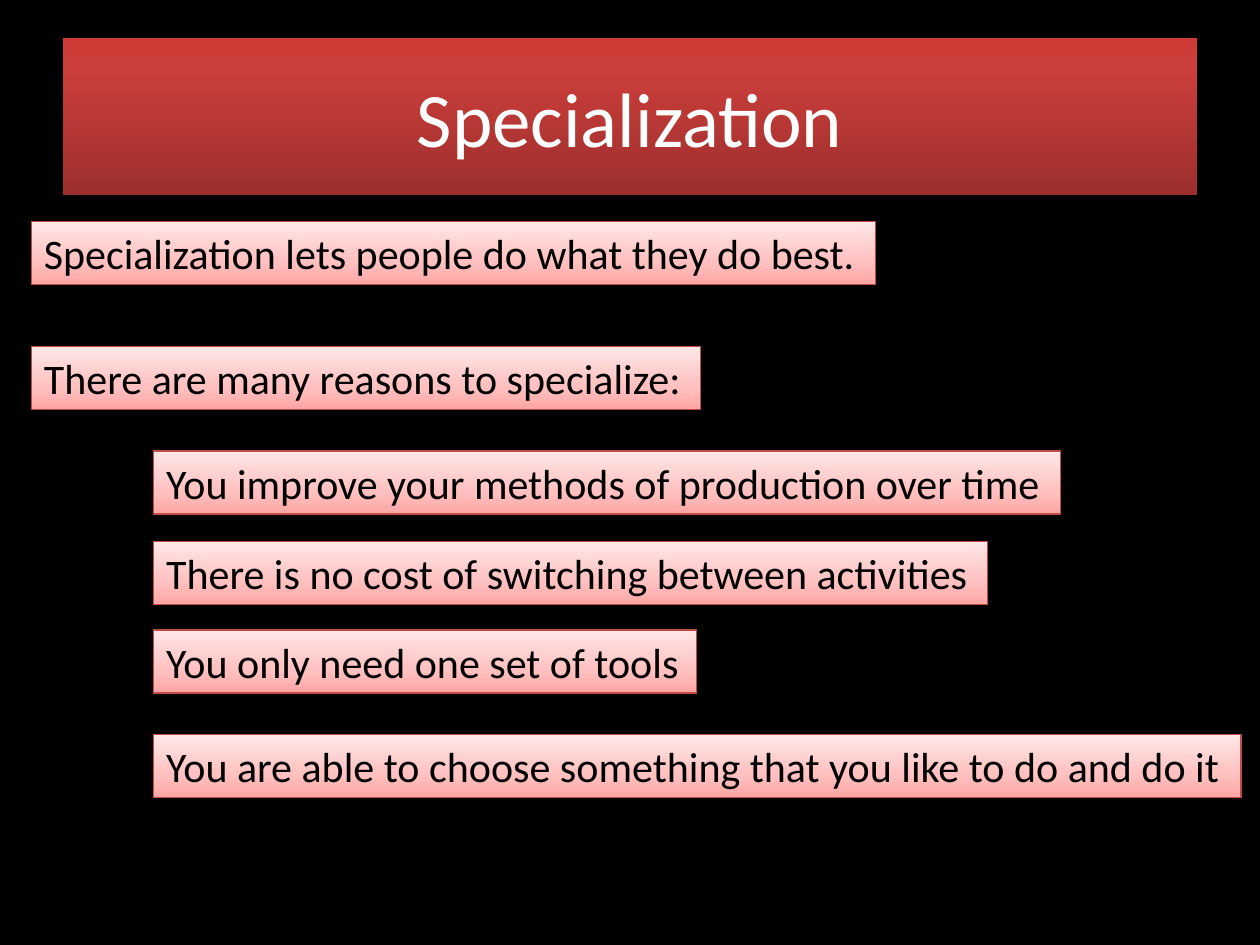
import copy
from dataclasses import dataclass

import pptx
import pptx.dml.color
import pptx.enum.text
import pptx.oxml.ns
import pptx.util
from pptx.util import Inches

FONT = "Calibri"
RED = [(0, "9C2F2D"), (0.8, "CB3E3A"), (1, "CE3B37")]
PINK = [(0, "FFA6A5"), (0.35, "FFC0BF"), (1, "FFE7E7")]
MAIN, SUB = 0.25, 1.22  # left edges of the two levels


@dataclass
class Note:
    left: float
    top: float
    width: float
    text: str


NOTES = [
    Note(MAIN, 1.76, 6.7, "Specialization lets people do what they do best."),
    Note(MAIN, 2.75, 5.31, "There are many reasons to specialize:"),
    Note(SUB, 3.58, 7.2, "You improve your methods of production over time"),
    Note(SUB, 4.3, 6.62, "There is no cost of switching between activities"),
    Note(SUB, 5, 4.31, "You only need one set of tools"),
    Note(SUB, 5.83, 8.63, "You are able to choose something that you like to do and do it"),
]


def color(code: str) -> pptx.dml.color.RGBColor:
    return pptx.dml.color.RGBColor.from_string(code)


def shade(shape, stops: list[tuple[float, str]]) -> None:
    """Fill with a three-stop gradient that runs from bottom to top."""
    shape.fill.gradient()
    shape.fill.gradient_angle = 90
    items = shape._element.spPr.find(".//" + pptx.oxml.ns.qn("a:gsLst"))
    items.append(copy.deepcopy(items[-1]))
    for stop, (place, code) in zip(shape.fill.gradient_stops, stops):
        stop.position = place
        stop.color.rgb = color(code)


def write(shape, text: str, size: int, code: str) -> None:
    shape.text_frame.text = text
    font = shape.text_frame.paragraphs[0].font
    font.name = FONT
    font.size = pptx.util.Pt(size)
    font.color.rgb = color(code)


def draw(slide, note: Note) -> None:
    box = slide.shapes.add_textbox(
        Inches(note.left), Inches(note.top), Inches(note.width), Inches(0.5))
    shade(box, PINK)
    box.line.color.rgb = color("BF4C48")
    box.line.width = pptx.util.Pt(0.75)
    write(box, note.text, 24, "000000")
    box.text_frame.word_wrap = False
    box.text_frame.auto_size = pptx.enum.text.MSO_AUTO_SIZE.SHAPE_TO_FIT_TEXT


def main() -> None:
    deck = pptx.Presentation()
    deck.slide_width, deck.slide_height = Inches(10), Inches(7.5)
    slide = deck.slides.add_slide(deck.slide_layouts[5])
    slide.background.fill.solid()
    slide.background.fill.fore_color.rgb = color("000000")

    title = slide.shapes.title
    title.left, title.top = Inches(0.5), Inches(0.3)
    title.width, title.height = Inches(9), Inches(1.25)
    shade(title, RED)
    write(title, "Specialization", 44, "FFFFFF")

    for note in NOTES:
        draw(slide, note)
    deck.save("out.pptx")


if __name__ == "__main__":
    main()
